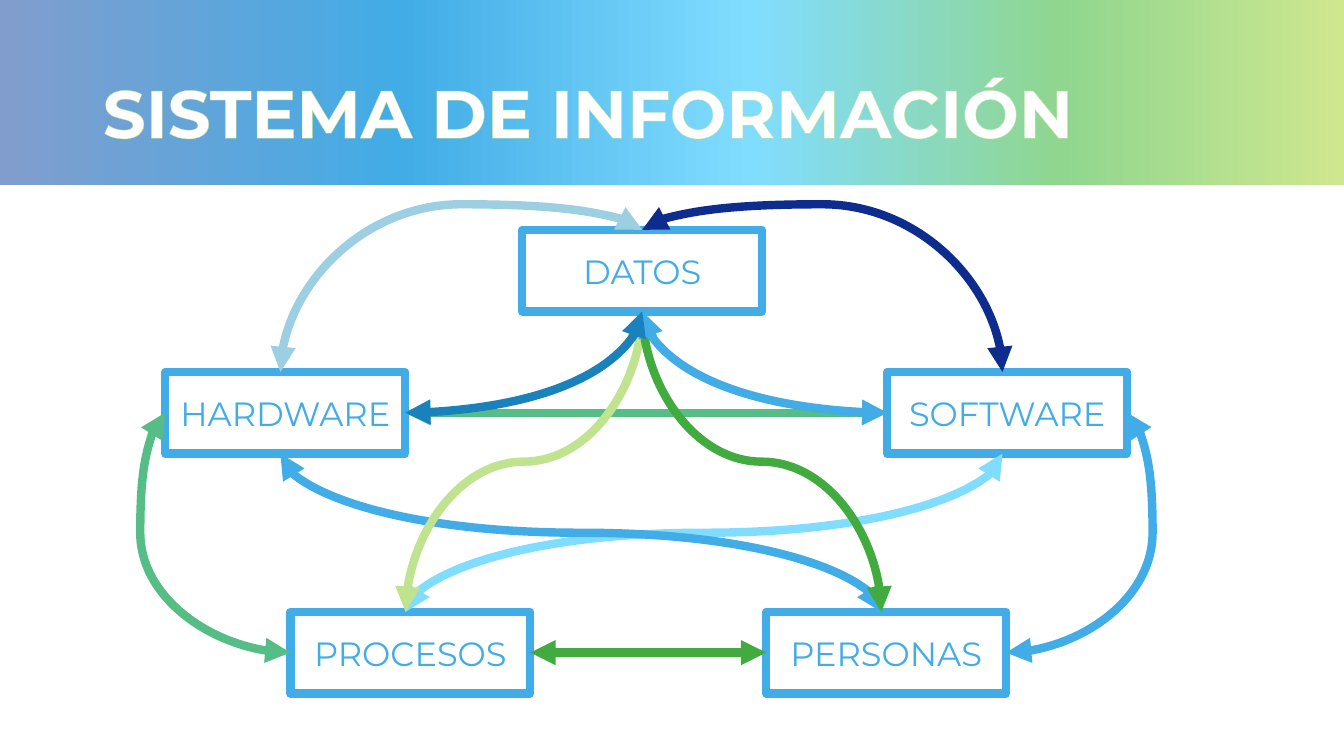
from collections import namedtuple

from lxml.etree import SubElement
from pptx import Presentation
from pptx.dml.color import RGBColor
from pptx.enum.shapes import MSO_CONNECTOR as Connector, MSO_SHAPE as Shape
from pptx.enum.text import MSO_ANCHOR as Anchor, MSO_AUTO_SIZE as AutoSize, PP_ALIGN as Align
from pptx.oxml.ns import qn
from pptx.util import Inches, Pt

FONT = "Montserrat"
WHITE = RGBColor(0xFF, 0xFF, 0xFF)
LAVENDER = RGBColor(0x81, 0x9D, 0xCD)
BLUE = RGBColor(0x42, 0xAC, 0xE6)
SKY = RGBColor(0x81, 0xDD, 0xFF)
MINT = RGBColor(0x90, 0xD6, 0x8F)
LIME = RGBColor(0xCF, 0xE7, 0x8F)
PALE_GREEN = RGBColor(0xBF, 0xE3, 0x8F)
JADE = RGBColor(0x57, 0xBD, 0x87)
GREEN = RGBColor(0x42, 0xAB, 0x3F)
MIST = RGBColor(0x9D, 0xCF, 0xE2)
NAVY = RGBColor(0x0E, 0x2C, 0x8E)
OCEAN = RGBColor(0x19, 0x82, 0xBD)

Box = namedtuple("Box", "left top width height")
Link = namedtuple("Link", "start start_side end end_side color bend")

WIDTH, HEIGHT = Inches(13.33), Inches(7.5)
BANNER = Box(0, Inches(-0.08), WIDTH, Inches(1.92))
DIAGRAM = Box(0, Inches(1.84), WIDTH, Inches(5.66))
BANNER_STOPS = [(0, LAVENDER), (30, BLUE), (56, SKY), (79, MINT), (100, LIME)]

# Columns and rows of a 100 by 100 grid over the diagram
NODE_COLUMNS, NODE_ROWS = 17.85, 14.31
NODES = {
    "SOFTWARE": (66.02, 32.69),
    "HARDWARE": (12.3, 32.69),
    "DATOS": (38.86, 7.77),
    "PROCESOS": (21.61, 74.73),
    "PERSONAS": (57.01, 74.73),
}
# Where arrows meet the top and bottom of a node, as a share of its width
PORT_SHARE = {"DATOS": 0.5}
SIDE_PORT_SHARE = 0.48

# A bend is the turning point as a share of the way; None is a single quarter turn
LINKS = [
    Link("PROCESOS", "left", "HARDWARE", "left", JADE, 1.2),
    Link("SOFTWARE", "right", "PERSONAS", "right", BLUE, -0.21),
    Link("SOFTWARE", "bottom", "PROCESOS", "top", SKY, 0.5),
    Link("PERSONAS", "top", "HARDWARE", "bottom", BLUE, 0.5),
    Link("DATOS", "top", "HARDWARE", "top", MIST, -0.18),
    Link("DATOS", "top", "SOFTWARE", "top", NAVY, -0.18),
    Link("SOFTWARE", "left", "HARDWARE", "right", JADE, 0.5),
    Link("DATOS", "bottom", "PROCESOS", "top", PALE_GREEN, 0.5),
    Link("DATOS", "bottom", "PERSONAS", "top", GREEN, 0.5),
    Link("DATOS", "bottom", "SOFTWARE", "left", BLUE, None),
    Link("DATOS", "bottom", "HARDWARE", "right", OCEAN, None),
]


def add_span(para, text, size, color, bold=False):
    span = para.add_run()
    span.text = text
    span.font.name = FONT
    span.font.size = Pt(size)
    span.font.bold = bold
    span.font.color.rgb = color
    return span


def add_solid(parent, color):
    solid = SubElement(parent, qn("a:solidFill"))
    SubElement(solid, qn("a:srgbClr"), val=str(color))


def add_banner(page, box):
    # Gradient band behind the title
    band = page.shapes.add_shape(Shape.RECTANGLE, *box)
    band.shadow.inherit = False
    band.line.fill.background()
    band.fill.gradient()
    band.fill.gradient_angle = 0
    stops = band._element.spPr.find(qn("a:gradFill")).find(qn("a:gsLst"))
    for stop in list(stops):
        stops.remove(stop)
    for percent, color in BANNER_STOPS:
        stop = SubElement(stops, qn("a:gs"), pos=str(percent * 1000))
        SubElement(stop, qn("a:srgbClr"), val=str(color))
    page.shapes._spTree.insert(2, band._element)

    # Title
    title = page.shapes.title
    title.left, title.top = box.left + Inches(0.92), box.top + Inches(0.4)
    title.width, title.height = Inches(11.5), Inches(1.67)
    frame = title.text_frame
    frame.auto_size = AutoSize.NONE
    frame.vertical_anchor = Anchor.MIDDLE
    para = frame.paragraphs[0]
    para.alignment = Align.LEFT
    para.line_spacing = 0.9
    span = add_span(para, "SISTEMA DE INFORMACIÓN", 48, WHITE, bold=True)
    properties = span.font._element
    outline = SubElement(properties, qn("a:ln"), w=str(Pt(0.75)))
    add_solid(outline, PALE_GREEN)
    properties.insert(0, outline)


def add_node(page, name, box):
    node = page.shapes.add_shape(Shape.RECTANGLE, *box)
    node.shadow.inherit = False
    node.fill.solid()
    node.fill.fore_color.rgb = WHITE
    node.line.color.rgb = BLUE
    node.line.width = Pt(6)
    node.text_frame.vertical_anchor = Anchor.MIDDLE
    para = node.text_frame.paragraphs[0]
    para.alignment = Align.CENTER
    add_span(para, name, 24, BLUE)
    return node


def find_port(node, side):
    if side in ("left", "right"):
        x = node.left + (node.width if side == "right" else 0)
        return x, node.top + node.height // 2
    share = PORT_SHARE.get(node.text_frame.text, SIDE_PORT_SHARE)
    y = node.top + (node.height if side == "bottom" else 0)
    return node.left + int(node.width * share), y


def style_arrow(arrow, color):
    arrow.line.color.rgb = color
    arrow.line.width = Pt(6)
    line = arrow.line._get_or_add_ln()
    SubElement(line, qn("a:headEnd"), type="triangle")
    SubElement(line, qn("a:tailEnd"), type="triangle")
    SubElement(arrow._element.spPr, qn("a:effectLst"))


def add_link(page, nodes, link):
    x1, y1 = find_port(nodes[link.start], link.start_side)
    x2, y2 = find_port(nodes[link.end], link.end_side)
    upright = link.start_side in ("top", "bottom")
    if upright:
        # Lay the curve on its side about its centre; the rotation stands it up
        across, down = x2 - x1, y2 - y1
        middle_x, middle_y = (x1 + x2) // 2, (y1 + y2) // 2
        x1, y1 = middle_x - down // 2, middle_y + across // 2
        x2, y2 = x1 + down, y1 - across
    arrow = page.shapes.add_connector(Connector.CURVE, x1, y1, x2, y2)
    properties = arrow._element.spPr
    if upright:
        properties.find(qn("a:xfrm")).set("rot", str(90 * 60000))
    geometry = properties.find(qn("a:prstGeom"))
    if link.bend is None:
        geometry.set("prst", "curvedConnector2")
    else:
        guides = geometry.find(qn("a:avLst"))
        SubElement(guides, qn("a:gd"), name="adj1", fmla=f"val {round(link.bend * 100000)}")
    style_arrow(arrow, link.color)


def add_diagram(page, box):
    column, row = box.width / 100, box.height / 100
    nodes = {}
    for name, (across, down) in NODES.items():
        place = Box(int(box.left + across * column), int(box.top + down * row),
                    int(NODE_COLUMNS * column), int(NODE_ROWS * row))
        nodes[name] = add_node(page, name, place)

    # Level arrow joined to the two lower nodes
    level = page.shapes.add_connector(Connector.STRAIGHT, 0, 0, 0, 0)
    level.begin_connect(nodes["PROCESOS"], 3)
    level.end_connect(nodes["PERSONAS"], 1)
    style_arrow(level, GREEN)

    # Curved arrows
    for link in LINKS:
        add_link(page, nodes, link)


def main():
    deck = Presentation()
    deck.slide_width, deck.slide_height = WIDTH, HEIGHT
    page = deck.slides.add_slide(deck.slide_layouts[5])
    add_banner(page, BANNER)
    add_diagram(page, DIAGRAM)
    deck.save("out.pptx")


if __name__ == "__main__":
    main()
